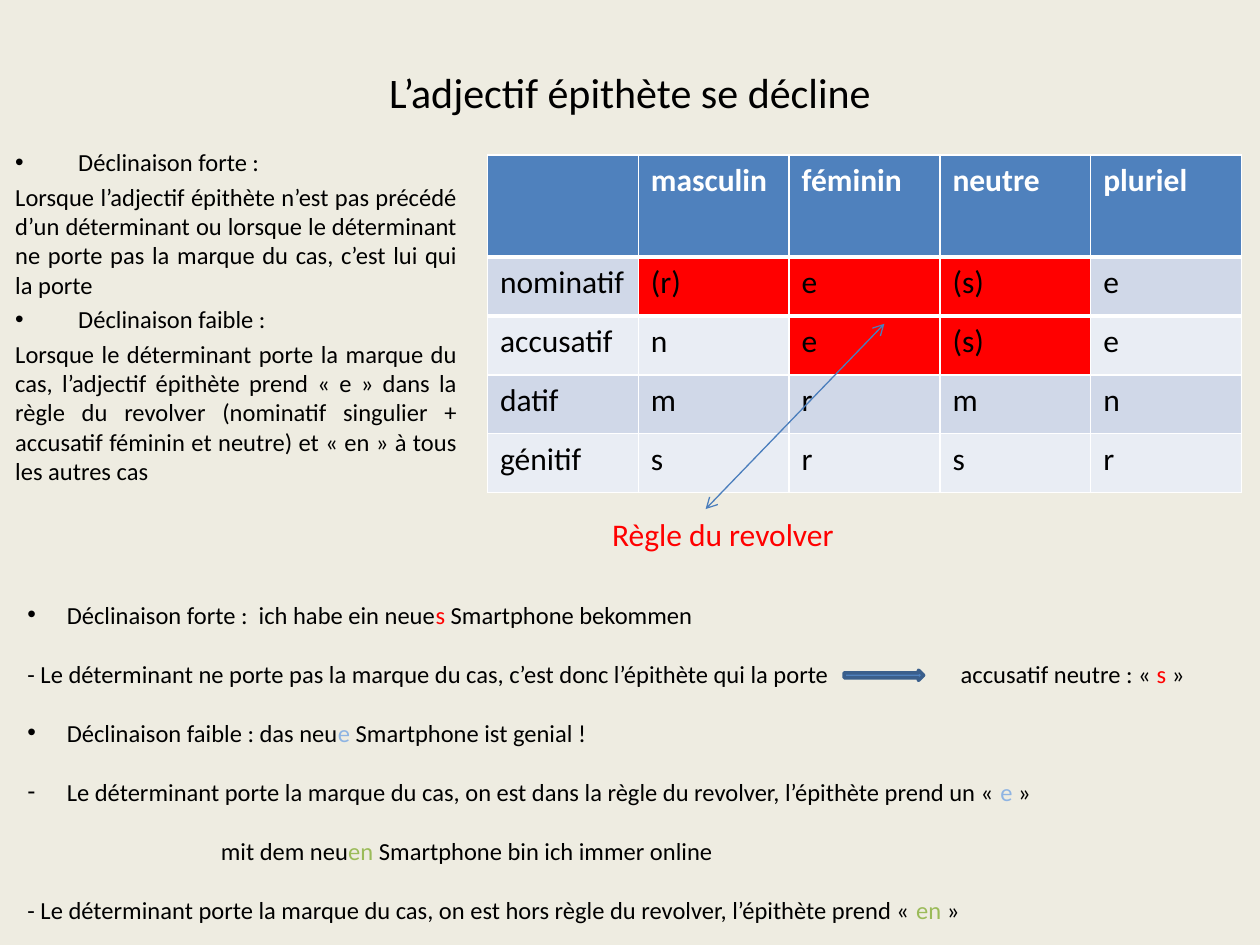
from lxml import etree
from pptx import Presentation
from pptx.dml.color import RGBColor
from pptx.enum.shapes import MSO_CONNECTOR, MSO_SHAPE
from pptx.enum.text import MSO_ANCHOR, MSO_AUTO_SIZE, PP_ALIGN
from pptx.oxml.ns import qn
from pptx.util import Pt

JUSTIFY, CENTER = PP_ALIGN.JUSTIFY, PP_ALIGN.CENTER
FONT = "Calibri"
BLACK, WHITE, RED, BLUE, GREEN = "000000", "FFFFFF", "FF0000", "8EB4E3", "9BBB59"
HEADER, BANDS = "4F81BD", ("D0D8E8", "E9EDF4")

TITLE = "L’adjectif épithète se décline"
# Paragraphs: (bullet, left margin, runs); a run is (text, colour)
RULES = [
    ("•", 36, [("Déclinaison forte :", BLACK)]),
    (None, 0, [("Lorsque l’adjectif épithète n’est pas précédé d’un déterminant ou lorsque "
                "le déterminant ne porte pas la marque du cas, c’est lui qui la porte", BLACK)]),
    ("•", 36, [("Déclinaison faible :", BLACK)]),
    (None, 0, [("Lorsque le déterminant porte la marque du cas, l’adjectif épithète prend "
                "« e » dans la règle du revolver (nominatif singulier + accusatif féminin "
                "et neutre) et « en » à tous les autres cas", BLACK)]),
]
EXAMPLES = [
    ("•", 22.5, [("Déclinaison forte :  ich habe ein neue", BLACK), ("s", RED),
                 (" Smartphone bekommen", BLACK)]),
    (None, 0, [("- Le déterminant ne porte pas la marque du cas, c’est donc l’épithète "
                "qui la porte", BLACK)]),
    ("•", 22.5, [("Déclinaison faible : das neu", BLACK), ("e", BLUE),
                 (" Smartphone ist genial !", BLACK)]),
    ("-", 22.5, [("Le déterminant porte la marque du cas, on est dans la règle du revolver, "
                  "l’épithète prend un « ", BLACK), ("e", BLUE), (" »", BLACK)]),
    (None, 110.5, [("mit dem neu", BLACK), ("en", GREEN),
                   (" Smartphone bin ich immer online", BLACK)]),
    (None, 0, [("- Le déterminant porte la marque du cas, on est hors règle du revolver, "
                "l’épithète prend « ", BLACK), ("en", GREEN), (" »", BLACK)]),
]
CONCLUSION = [(None, 0, [("accusatif neutre : « ", BLACK), ("s", RED), (" »", BLACK)])]
ENDINGS = [
    ["", "masculin", "féminin", "neutre", "pluriel"],
    ["nominatif", "(r)", "e", "(s)", "e"],
    ["accusatif", "n", "e", "(s)", "e"],
    ["datif", "m", "r", "m", "n"],
    ["génitif", "s", "r", "s", "r"],
]
REVOLVER = {(1, 1), (1, 2), (1, 3), (2, 2), (2, 3)}
COL_W, HEADER_H, ROW_H = 86.2, 58.2, 33.7
EXAMPLES_TOP, LINE_H, EXAMPLE_GAP = 339.1, 17.1, 16.9


def rgb(color):
    return RGBColor.from_string(color)


def fill(obj, color):
    obj.fill.solid()
    obj.fill.fore_color.rgb = rgb(color)


def add_run(p, text, size, color, bold=False):
    r = p.add_run()
    r.text = text
    r.font.name, r.font.size, r.font.bold = FONT, Pt(size), bold
    r.font.color.rgb = rgb(color)


def place(sp, left, top, width, height):
    sp.left, sp.top, sp.width, sp.height = Pt(left), Pt(top), Pt(width), Pt(height)


def add_paragraphs(tf, items, gap=None):
    """Write justified paragraphs with hanging bullets and an optional gap between them."""
    for i, (bullet, margin, runs) in enumerate(items):
        p = tf.paragraphs[0] if i == 0 else tf.add_paragraph()
        p.alignment = JUSTIFY
        if gap and i:
            p.space_before = Pt(gap)
        pPr = p._p.get_or_add_pPr()
        pPr.set("marL", str(Pt(margin)))
        pPr.set("indent", str(-Pt(margin) if bullet else 0))
        if bullet:
            etree.SubElement(pPr, qn("a:buFont"), typeface="Arial")
            etree.SubElement(pPr, qn("a:buChar"), char=bullet)
        else:
            etree.SubElement(pPr, qn("a:buNone"))
        for text, color in runs:
            add_run(p, text, 14, color)


def add_text_box(slide, *box):
    tf = slide.shapes.add_textbox(*map(Pt, box)).text_frame
    tf.word_wrap = True
    return tf


def set_border(cell, side, color, width):
    ln = etree.Element(qn("a:" + side), w=str(Pt(width)))
    solid = etree.SubElement(ln, qn("a:solidFill"))
    etree.SubElement(solid, qn("a:srgbClr"), val=color)
    cell._tc.get_or_add_tcPr().insert(0, ln)


prs = Presentation()
prs.slide_width, prs.slide_height = Pt(720), Pt(540)
s = prs.slides.add_slide(prs.slide_layouts[1])
fill(s.background, "EEECE1")

title, body = s.placeholders
place(title, 36, 21.6, 648, 61.2)
title.text_frame.vertical_anchor = MSO_ANCHOR.MIDDLE
p = title.text_frame.paragraphs[0]
p.alignment = CENTER
add_run(p, TITLE, 24, BLACK)

place(body, 1.5, 80.6, 267, 217.4)
body.text_frame.auto_size = MSO_AUTO_SIZE.NONE
add_paragraphs(body.text_frame, RULES)

n_rows, n_cols = len(ENDINGS), len(ENDINGS[0])
table = s.shapes.add_table(n_rows, n_cols, Pt(278.6), Pt(88.6), Pt(n_cols * COL_W),
                           Pt(HEADER_H + (n_rows - 1) * ROW_H)).table
for col in table.columns:
    col.width = Pt(COL_W)
for i, row in enumerate(ENDINGS):
    table.rows[i].height = Pt(ROW_H if i else HEADER_H)
    for j, text in enumerate(row):
        cell = table.cell(i, j)
        band = BANDS[(i - 1) % 2] if i else HEADER
        fill(cell, RED if (i, j) in REVOLVER else band)
        if i < 2:
            set_border(cell, "lnT" if i else "lnB", WHITE, 3)
        if text:
            add_run(cell.text_frame.paragraphs[0], text, 18, BLACK if i else WHITE, bold=i == 0)

link = s.shapes.add_connector(MSO_CONNECTOR.STRAIGHT, Pt(403.2), Pt(290.9), Pt(505.4), Pt(185))
link.line.color.rgb = rgb("4B7EBC")
link.line.width = Pt(0.75)
ln = link.line._get_or_add_ln()
for end in ("a:headEnd", "a:tailEnd"):
    etree.SubElement(ln, qn(end), type="arrow")
etree.SubElement(link._element.spPr, qn("a:effectLst"))

tf = add_text_box(s, 342.7, 290.9, 249, 29)
add_run(tf.paragraphs[0], "Règle du revolver", 18, RED)

tf = add_text_box(s, 8.6, EXAMPLES_TOP, 711.4, 193.7)
add_paragraphs(tf, EXAMPLES, EXAMPLE_GAP)

# The conclusion stands level with the second example line
tf = add_text_box(s, 541.9, EXAMPLES_TOP + LINE_H + EXAMPLE_GAP, 170, 24)
add_paragraphs(tf, CONCLUSION)

arrow = s.shapes.add_shape(MSO_SHAPE.RIGHT_ARROW, Pt(482.4), Pt(383), Pt(45.4), Pt(5.8))
arrow.shadow.inherit = False
fill(arrow, HEADER)
arrow.line.color.rgb = rgb("3A5F8C")
arrow.line.width = Pt(2)

prs.save("out.pptx")
